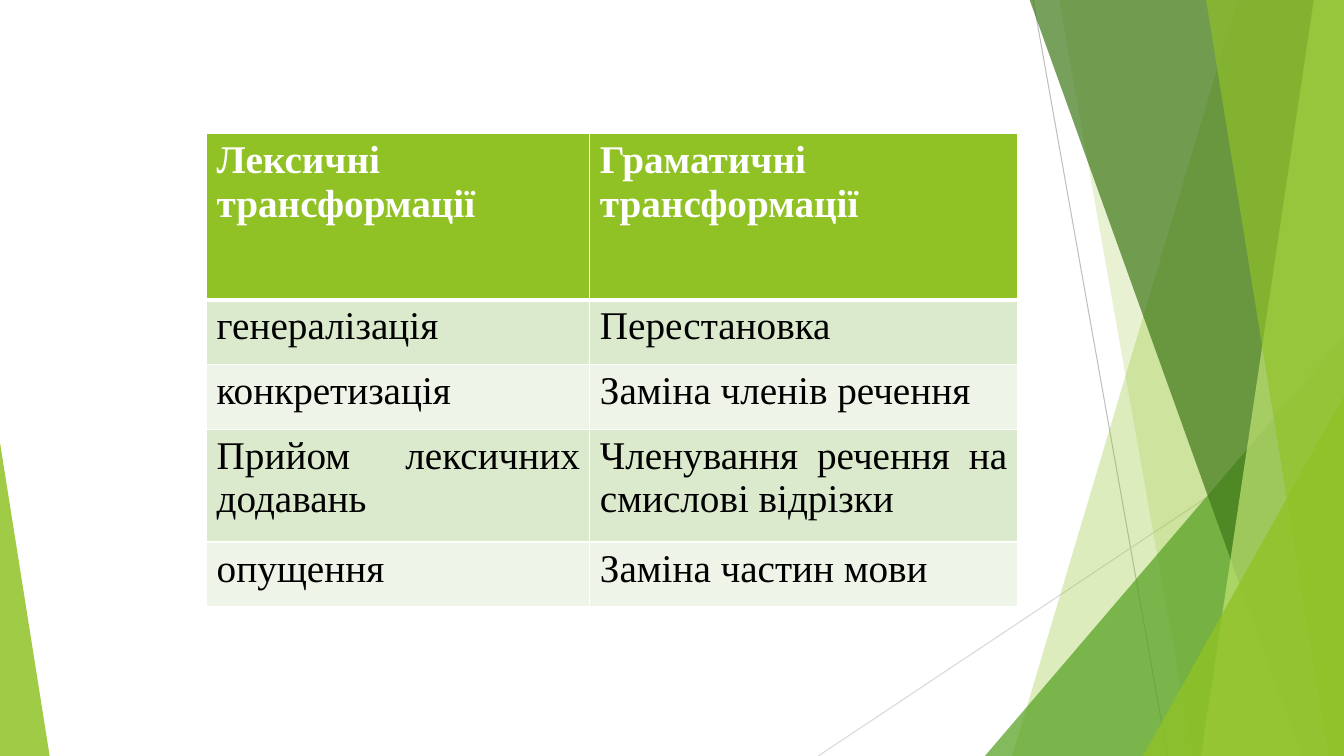
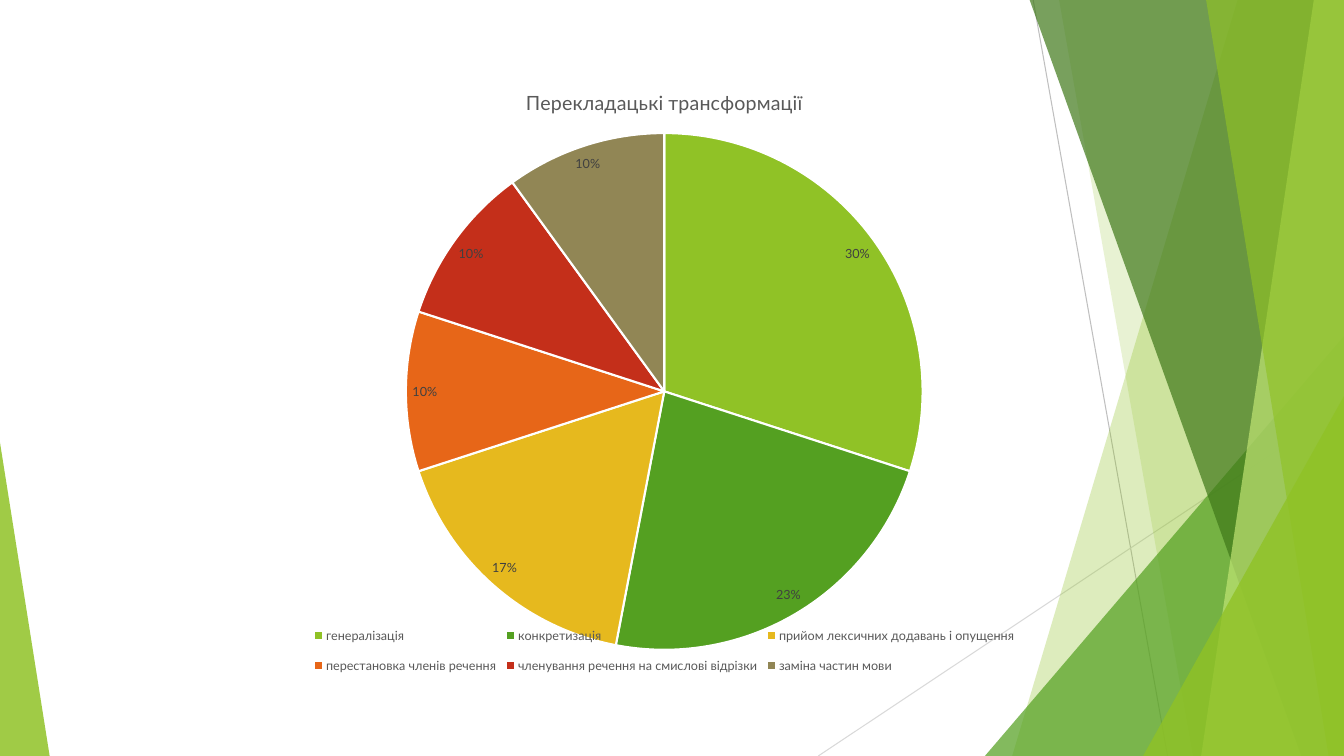
from lxml import etree
from pptx import Presentation
from pptx import util as u
from pptx.chart.data import CategoryChartData
from pptx.dml.color import RGBColor
from pptx.enum import chart as ch, shapes, text
from pptx.oxml.ns import qn

Pt = u.Pt
WIDTH, HEIGHT = 960, 540
WHITE = RGBColor(0xFF, 0xFF, 0xFF)
BLACK = RGBColor(0, 0, 0)
LIME = RGBColor(0x90, 0xC2, 0x26)
GREEN = RGBColor(0x54, 0xA0, 0x21)
FOREST = RGBColor(0x3F, 0x78, 0x19)
PALE_LIME = RGBColor(0xC0, 0xE4, 0x74)
GOLD = RGBColor(0xE6, 0xB9, 0x1E)
ORANGE = RGBColor(0xE7, 0x66, 0x18)
RED = RGBColor(0xC4, 0x2F, 0x1A)
OLIVE = RGBColor(0x91, 0x86, 0x55)
ROW_DARK = RGBColor(0xDB, 0xE9, 0xCD)
ROW_LIGHT = RGBColor(0xEE, 0xF4, 0xE8)
RAY_DARK = RGBColor(0xBF, 0xBF, 0xBF)
RAY_LIGHT = RGBColor(0xD9, 0xD9, 0xD9)
CAPTION_GREY = RGBColor(0x59, 0x59, 0x59)
LABEL_GREY = RGBColor(0x40, 0x40, 0x40)
TABLE_FONT, CHART_FONT = "Times New Roman", "Lato"

RAYS = [(738, 0, 834, HEIGHT, RAY_DARK), (WIDTH, 290, 584.5, HEIGHT, RAY_LIGHT)]
FACETS = [
    ("band", (884, 723), LIME, 30),
    ("band", (756.5, 852), LIME, 20),
    ("corner", (703.5, 240, 256.5, 300, 1), GREEN, 72),
    ("band", (735.5, 929.5), FOREST, 70),
    ("band", (938.5, 858), PALE_LIME, 70),
    ("band", (861.5, 949), LIME, 65),
    ("corner", (816.5, 283, 143.5, 257, 1), LIME, 80),
    ("corner", (0, 316, 35.5, 224, 0), LIME, 85),
]
ROWS = [
    ("Лексичні\nтрансформації", "Граматичні трансформації"),
    ("генералізація", "Перестановка"),
    ("конкретизація", "Заміна членів речення"),
    ("Прийом лексичних додавань", "Членування речення на смислові відрізки"),
    ("опущення", "Заміна частин мови"),
]
COLUMN_PARTS = (273.75, 305.25)
ROW_PARTS = (118.75, 46.25, 46.25, 80.5, 46.25)
SHARES = [
    ("генералізація", 0.3, LIME),
    ("конкретизація", 0.23, GREEN),
    ("прийом лексичних додавань і опущення", 0.17, GOLD),
    ("перестановка членів речення", 0.1, ORANGE),
    ("членування речення на смислові відрізки", 0.1, RED),
    ("заміна частин мови", 0.1, OLIVE),
]


def box(left, top, width, height):
    """Turn a box in points into lengths."""
    return Pt(left), Pt(top), Pt(width), Pt(height)


def add_ray(slide, x1, y1, x2, y2, color):
    """Draw one thin line of the backdrop."""
    ray = slide.shapes.add_connector(shapes.MSO_CONNECTOR.STRAIGHT, *box(x1, y1, x2, y2))
    ray.line.color.rgb = color
    ray.line.width = Pt(0.75)
    etree.SubElement(ray._element.spPr, qn("a:effectLst"))


def add_band(slide, top_left, bottom_left):
    """Draw a slanted band that runs to the right edge of the slide."""
    outline = slide.shapes.build_freeform(Pt(top_left), 0)
    corners = [(WIDTH, 0), (WIDTH, HEIGHT), (bottom_left, HEIGHT)]
    outline.add_line_segments([(Pt(x), Pt(y)) for x, y in corners])
    return outline.convert_to_shape()


def add_corner(slide, left, top, width, height, apex):
    """Draw a right-angled triangle with its apex at one side."""
    corner = slide.shapes.add_shape(
        shapes.MSO_SHAPE.ISOSCELES_TRIANGLE, *box(left, top, width, height))
    corner.adjustments[0] = apex
    return corner


def add_backdrop(slide):
    """Draw the rays and translucent facets shared by all slides."""
    for ray in RAYS:
        add_ray(slide, *ray)
    builders = {"band": add_band, "corner": add_corner}
    for kind, place, color, opacity in FACETS:
        facet = builders[kind](slide, *place)
        facet.shadow.inherit = False
        facet.line.fill.background()
        facet.fill.solid()
        facet.fill.fore_color.rgb = color
        tint = facet._element.spPr.find(".//" + qn("a:srgbClr"))
        etree.SubElement(tint, qn("a:alpha"), val=str(opacity * 1000))


def add_borders(cell, widths):
    """Give a cell white borders, with a width for each side."""
    props = cell._tc.get_or_add_tcPr()
    for index, (side, width) in enumerate(widths.items()):
        border = etree.Element(qn("a:ln" + side), w=str(Pt(width)))
        fill = etree.SubElement(border, qn("a:solidFill"))
        etree.SubElement(fill, qn("a:srgbClr"), val=str(WHITE))
        props.insert(index, border)


def fill_cell(cell, content, row):
    """Write and format one table cell according to its row."""
    header = row == 0
    cell.text_frame.text = content
    for paragraph in cell.text_frame.paragraphs:
        paragraph.alignment = text.PP_ALIGN.JUSTIFY
        for run in paragraph.runs:
            run.font.name = TABLE_FONT
            run.font.size = Pt(28)
            run.font.bold = header
            run.font.color.rgb = WHITE if header else BLACK
    cell.fill.solid()
    cell.fill.fore_color.rgb = LIME if header else (ROW_LIGHT, ROW_DARK)[row % 2]
    add_borders(cell, {"L": 1, "R": 1, "T": 1, "B": 3 if header else 1})


def add_transformations(slide, left, top, width, height):
    """Place the table of lexical and grammatical transformations."""
    table = slide.shapes.add_table(
        len(ROWS), len(ROWS[0]), *box(left, top, width, height)).table
    for column, part in zip(table.columns, COLUMN_PARTS):
        column.width = Pt(width * part / sum(COLUMN_PARTS))
    for row, part in zip(table.rows, ROW_PARTS):
        row.height = Pt(height * part / sum(ROW_PARTS))
    for row, contents in enumerate(ROWS):
        for column, content in enumerate(contents):
            fill_cell(table.cell(row, column), content, row)


def style_font(font, size, color):
    """Format chart text."""
    font.name = CHART_FONT
    font.size = Pt(size)
    font.bold = False
    font.color.rgb = color


def fix_layout(part, index, **settings):
    """Set the place of a chart part as fractions of the chart box."""
    for old in part.findall(qn("c:layout")):
        part.remove(old)
    layout = etree.Element(qn("c:layout"))
    manual = etree.SubElement(layout, qn("c:manualLayout"))
    for tag, value in settings.items():
        etree.SubElement(manual, qn("c:" + tag), val=str(value))
    part.insert(index, layout)


def add_shares(slide, left, top, width, height):
    """Place the pie chart with the shares of the transformations."""
    data = CategoryChartData(number_format="0%")
    data.categories = [name for name, _, _ in SHARES]
    data.add_series("Series 1", [share for _, share, _ in SHARES])
    chart = slide.shapes.add_chart(
        ch.XL_CHART_TYPE.PIE, *box(left, top, width, height), data).chart
    style_font(chart.font, 10, BLACK)
    chart.has_title = True
    heading = chart.chart_title.text_frame.paragraphs[0]
    heading.text = "Перекладацькі трансформації"
    style_font(heading.runs[0].font, 14, CAPTION_GREY)
    chart.has_legend = True
    chart.legend.position = ch.XL_LEGEND_POSITION.BOTTOM
    chart.legend.include_in_layout = False
    style_font(chart.legend.font, 9, CAPTION_GREY)
    pie = chart.plots[0]
    pie.vary_by_categories = True
    pie.has_data_labels = True
    labels = pie.data_labels
    labels.show_value = True
    labels.show_percentage = False
    labels.number_format = "0%"
    labels.number_format_is_linked = False
    labels.position = ch.XL_LABEL_POSITION.BEST_FIT
    style_font(labels.font, 9, LABEL_GREY)
    for index, (_, _, color) in enumerate(SHARES):
        slice_format = pie.series[0].points[index].format
        slice_format.fill.solid()
        slice_format.fill.fore_color.rgb = color
        slice_format.line.color.rgb = WHITE
        slice_format.line.width = Pt(1.5)
    edges = {"xMode": "edge", "yMode": "edge"}
    plot_area = chart._chartSpace.find(".//" + qn("c:plotArea"))
    fix_layout(plot_area, 0, layoutTarget="inner", **edges, x=0.2, y=0.105, w=0.6, h=0.823)
    fix_layout(chart.legend._element, 1, **edges, x=0.117, y=0.87, w=0.766, h=0.118)


def main():
    """Build and save the presentation."""
    deck = Presentation()
    deck.slide_width, deck.slide_height = Pt(WIDTH), Pt(HEIGHT)
    regions = [
        (add_transformations, (147.6, 95.5, 579, 338)),
        (add_shares, (142.5, 48, 664, 448.5)),
    ]
    for add_region, place in regions:
        slide = deck.slides.add_slide(deck.slide_layouts[6])
        add_backdrop(slide)
        add_region(slide, *place)
    deck.save("out.pptx")


if __name__ == "__main__":
    main()
